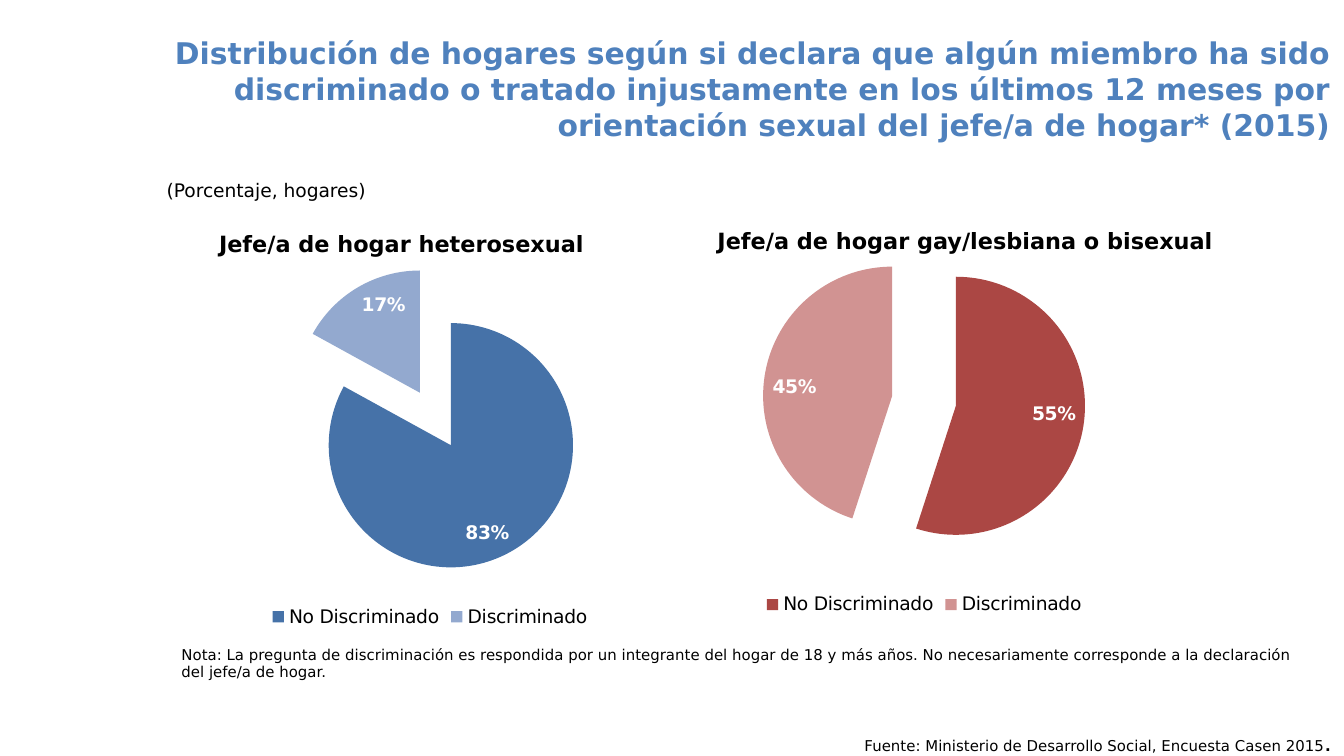
from lxml import etree
from pptx import Presentation
from pptx.chart.data import CategoryChartData
from pptx.dml.color import RGBColor
from pptx.enum.chart import XL_CHART_TYPE, XL_LABEL_POSITION, XL_LEGEND_POSITION
from pptx.enum.shapes import MSO_SHAPE
from pptx.enum.text import MSO_ANCHOR, MSO_AUTO_SIZE, PP_ALIGN
from pptx.oxml.ns import qn
from pptx.util import Cm, Pt

FONT = "DejaVu Sans"
CATEGORIES = ("No Discriminado", "Discriminado")


def colour(value):
    return RGBColor.from_string(value)


def lengths(box):
    return [Cm(value) for value in box]


def set_font(font, size, value="000000", bold=False, name=FONT):
    font.name = name
    font.size = Pt(size)
    font.bold = bold
    font.color.rgb = colour(value)


def add_run(paragraph, text, size, value="000000", bold=False):
    run = paragraph.add_run()
    run.text = text
    set_font(run.font, size, value, bold)


def add_title(slide, box):
    title = slide.shapes.title
    title.left, title.top, title.width, title.height = lengths(box)
    frame = title.text_frame
    frame.word_wrap = True
    frame.auto_size = MSO_AUTO_SIZE.NONE
    frame.vertical_anchor = MSO_ANCHOR.TOP
    paragraph = frame.paragraphs[0]
    paragraph.alignment = PP_ALIGN.RIGHT
    add_run(paragraph, "Distribución de hogares según si declara que algún miembro "
            "ha sido discriminado o tratado injustamente en los últimos 12 meses por "
            "orientación sexual del jefe/a de hogar* (2015)", 16, "4F81BD", True)


def add_text(slide, box, text, size, bold=False, wrap=True):
    frame = slide.shapes.add_textbox(*lengths(box)).text_frame
    frame.word_wrap = wrap
    add_run(frame.paragraphs[0], text, size, bold=bold)


def add_source(slide, box):
    shape = slide.shapes.add_shape(MSO_SHAPE.RECTANGLE, *lengths(box))
    shape.shadow.inherit = False
    shape.fill.solid()
    shape.fill.fore_color.rgb = colour("FFFFFF")
    shape.line.fill.background()
    frame = shape.text_frame
    frame.word_wrap = False
    frame.vertical_anchor = MSO_ANCHOR.TOP
    paragraph = frame.paragraphs[0]
    paragraph.alignment = PP_ALIGN.RIGHT
    add_run(paragraph, "Fuente: Ministerio de Desarrollo Social, Encuesta Casen 2015", 8)
    add_run(paragraph, ".", 8, bold=True)


def set_plot_layout(chart, fractions):
    """Place the plot area by its x, y, width and height as parts of the chart."""
    plot_area = chart.element.find(".//" + qn("c:plotArea"))
    layout = plot_area.find(qn("c:layout"))
    if layout is None:
        layout = etree.Element(qn("c:layout"))
        plot_area.insert(0, layout)
    manual = etree.SubElement(layout, qn("c:manualLayout"))
    settings = [("layoutTarget", "inner"), ("xMode", "edge"), ("yMode", "edge")]
    settings += zip("xywh", fractions)
    for tag, value in settings:
        etree.SubElement(manual, qn("c:" + tag)).set("val", str(value))


def add_pie(slide, box, values, colours, plot_fractions):
    data = CategoryChartData()
    data.categories = CATEGORIES
    data.add_series("Hogares", values)
    chart = slide.shapes.add_chart(XL_CHART_TYPE.PIE, *lengths(box), data).chart
    set_font(chart.font, 10, name="Calibri")
    chart.has_title = False
    set_plot_layout(chart, plot_fractions)

    # Legend
    chart.has_legend = True
    chart.legend.position = XL_LEGEND_POSITION.BOTTOM
    chart.legend.include_in_layout = False
    set_font(chart.legend.font, 10)

    # Slices, pulled apart
    plot = chart.plots[0]
    plot.vary_by_categories = True
    series = plot.series[0]
    for index, value in enumerate(colours):
        fill = series.points[index].format.fill
        fill.solid()
        fill.fore_color.rgb = colour(value)
    explosion = etree.Element(qn("c:explosion"))
    explosion.set("val", "25")
    series.points[0].format
    series._element.find(qn("c:dPt")).addprevious(explosion)

    # Percentages
    labels = series.data_labels
    labels.show_percentage = True
    labels.show_value = False
    labels.number_format = "0%"
    labels.number_format_is_linked = False
    labels.position = XL_LABEL_POSITION.INSIDE_END
    set_font(labels.font, 10, "FFFFFF", True)


def main():
    presentation = Presentation()
    presentation.slide_width, presentation.slide_height = Cm(25.4), Cm(14.29)
    slide = presentation.slides.add_slide(presentation.slide_layouts[5])

    # Title and source
    add_title(slide, (2.97, 0.53, 22.43, 3))
    add_source(slide, (12.19, 13.79, 13.21, 0.43))

    # Pies
    add_pie(slide, (2.97, 4.34, 10.31, 7.62), (83, 17),
            ("4672A8", "93A9CF"), (0.23, 0.09, 0.56, 0.76))
    add_pie(slide, (12.98, 4.11, 8.97, 7.62), (55, 45),
            ("AB4744", "D19392"), (0.16, 0.05, 0.68, 0.81))

    # Headings, unit and note
    add_text(slide, (3.89, 4.22, 8.81, 0.76), "Jefe/a de hogar heterosexual", 12, True)
    add_text(slide, (13.31, 4.17, 10.36, 0.76),
             "Jefe/a de hogar gay/lesbiana o bisexual", 12, True)
    add_text(slide, (2.9, 3.25, 4.42, 0.69), "(Porcentaje, hogares)", 10, wrap=False)
    add_text(slide, (3.18, 12.07, 21.62, 0.94),
             "Nota: La pregunta de discriminación es respondida por un integrante del "
             "hogar de 18 y más años. No necesariamente corresponde a la declaración "
             "del jefe/a de hogar.", 8)

    presentation.save("out.pptx")


if __name__ == "__main__":
    main()
